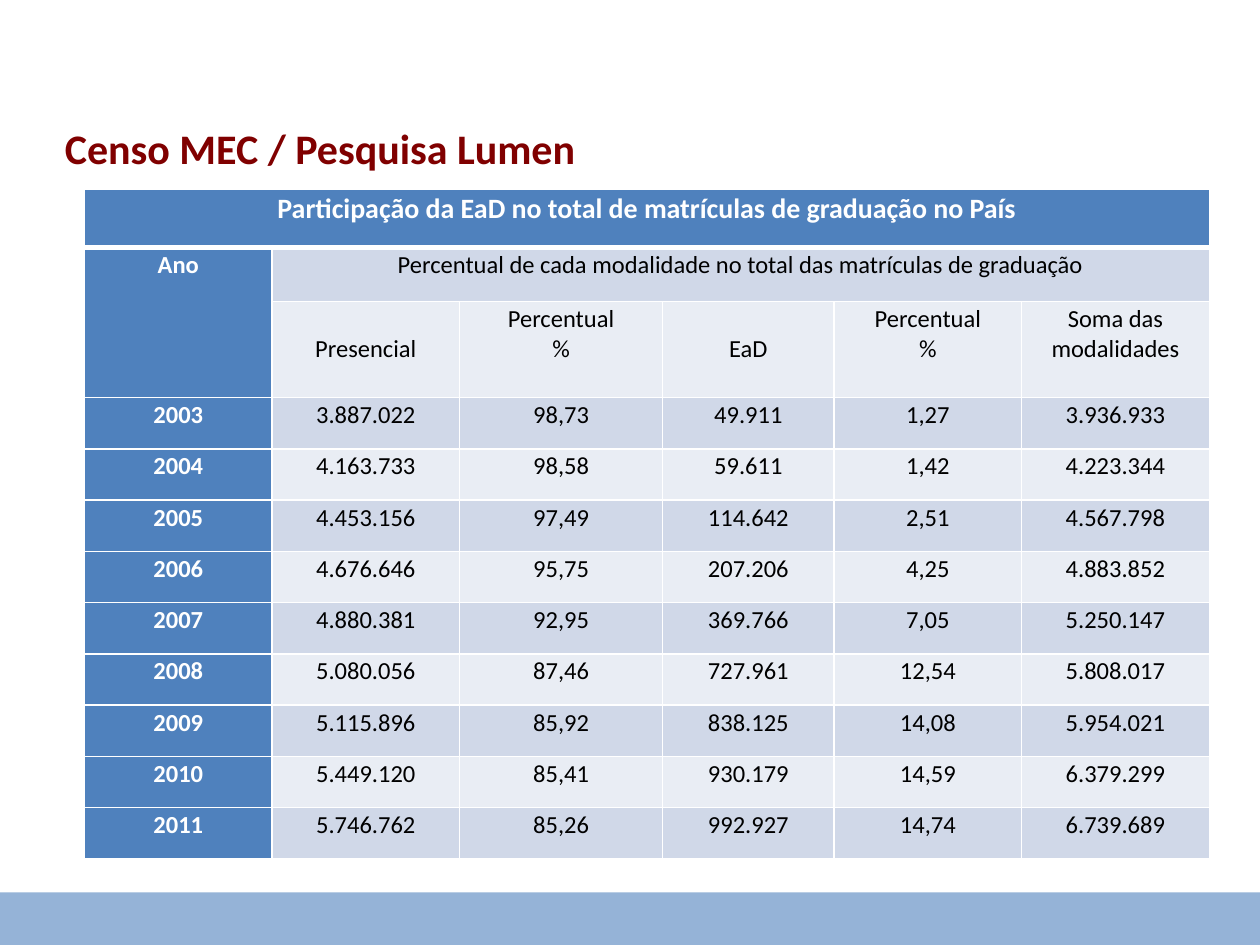
import pptx
import pptx.dml.color
import pptx.enum.shapes
import pptx.enum.text
import pptx.oxml
import pptx.oxml.ns
import pptx.util

Pt = pptx.util.Pt
RGB = pptx.dml.color.RGBColor
ALIGN = pptx.enum.text.PP_ALIGN

WHITE = RGB(0xFF, 0xFF, 0xFF)
BLACK = RGB(0, 0, 0)
MAROON = RGB(0x80, 0, 0)
BLUE = RGB(0x4F, 0x81, 0xBD)
FOOT = RGB(0x95, 0xB3, 0xD7)
DARK = RGB(0xD0, 0xD8, 0xE8)
LIGHT = RGB(0xE9, 0xED, 0xF4)

COLS = [107.2, 107.2, 116, 98, 107.2, 107.2]
HEADS = ["Presencial", "Percentual\n%", "EaD", "Percentual\n%",
         "Soma das modalidades"]
DATA = [
    ["2003", "3.887.022", "98,73", "49.911", "1,27", "3.936.933"],
    ["2004", "4.163.733", "98,58", "59.611", "1,42", "4.223.344"],
    ["2005", "4.453.156", "97,49", "114.642", "2,51", "4.567.798"],
    ["2006", "4.676.646", "95,75", "207.206", "4,25", "4.883.852"],
    ["2007", "4.880.381", "92,95", "369.766", "7,05", "5.250.147"],
    ["2008", "5.080.056", "87,46", "727.961", "12,54", "5.808.017"],
    ["2009", "5.115.896", "85,92", "838.125", "14,08", "5.954.021"],
    ["2010", "5.449.120", "85,41", "930.179", "14,59", "6.379.299"],
    ["2011", "5.746.762", "85,26", "992.927", "14,74", "6.739.689"],
]
ROWS = [33, 31, 55] + [29.3] * len(DATA)
LINE = 17.1  # height of one line of 14 point text


def write(frame, text, size=14, color=BLACK, bold=False, align=ALIGN.CENTER):
    """Fill a text frame, one paragraph for each line of text."""
    frame.word_wrap = True
    frame.text = text
    for para in frame.paragraphs:
        para.alignment = align
        font = para.runs[0].font
        font.name, font.size, font.bold = "Calibri", Pt(size), bold
        font.color.rgb = color


def edge(cell, **widths):
    """Draw white cell borders; keywords L, R, T, B give widths in points."""
    props = cell._tc.get_or_add_tcPr()
    for spot, side in enumerate("LRTB"):
        props.insert(spot, pptx.oxml.parse_xml(
            f'<a:ln{side} {pptx.oxml.ns.nsdecls("a")} '
            f'w="{Pt(widths.get(side, 1))}"><a:solidFill>'
            f'<a:srgbClr val="{WHITE}"/></a:solidFill></a:ln{side}>'))


class Page:
    def __init__(self, deck):
        self.slide = deck.slides.add_slide(deck.slide_layouts[6])
        self.shapes = self.slide.shapes

    def bar(self, x, y, w, h, fill):
        kind = pptx.enum.shapes.MSO_SHAPE.RECTANGLE
        shape = self.shapes.add_shape(kind, Pt(x), Pt(y), Pt(w), Pt(h))
        shape.shadow.inherit = False
        shape.fill.solid()
        shape.fill.fore_color.rgb = fill
        shape.line.fill.background()

    def text(self, x, y, w, h, text, **style):
        box = self.shapes.add_textbox(Pt(x), Pt(y), Pt(w), Pt(h))
        write(box.text_frame, text, **style)

    def grid(self, x, y, cols, rows):
        table = self.shapes.add_table(len(rows), len(cols), Pt(x), Pt(y),
                                      Pt(sum(cols)), Pt(sum(rows))).table
        table.first_row = table.horz_banding = False
        for col, wide in zip(table.columns, cols):
            col.width = Pt(wide)
        for row, high in zip(table.rows, rows):
            row.height = Pt(high)
        return table

    def cell(self, cell, fill, text="", drop=0, **style):
        """Paint a cell; drop lowers its text by that many points."""
        cell.fill.solid()
        cell.fill.fore_color.rgb = fill
        cell.margin_left = cell.margin_right = Pt(5)
        cell.margin_top, cell.margin_bottom = Pt(1.5 + drop), Pt(1.5)
        if text:
            write(cell.text_frame, text, **style)


def main():
    deck = pptx.Presentation()
    deck.slide_width, deck.slide_height = Pt(720), Pt(540)
    page = Page(deck)
    page.bar(0, 510, 720, 30, FOOT)
    page.text(30, 66.2, 684, 65.5, "Censo MEC / Pesquisa Lumen", size=24,
              color=MAROON, bold=True, align=ALIGN.LEFT)

    table = page.grid(48.3, 108.3, COLS, ROWS)
    title = "Participação da EaD no total de matrículas de graduação no País"
    share = ("Percentual de cada modalidade no total das matrículas "
             "de graduação")
    blank = [""] * 4
    body = [[title, ""] + blank, ["Ano", share] + blank, [""] + HEADS] + DATA
    for r, row in enumerate(body):
        for c, text in enumerate(row):
            cell = table.cell(r, c)
            head = r == 0 or c == 0
            fill = BLUE if head else DARK if r % 2 else LIGHT
            drop = LINE if text in ("Presencial", "EaD") else 0
            page.cell(cell, fill, text, drop, size=16 if r == 0 else 14,
                      color=WHITE if head else BLACK, bold=head)
            edge(cell, T=3 if r == 1 else 1, B=3 if r == 0 else 1)
    table.cell(0, 0).merge(table.cell(0, 5))
    table.cell(1, 0).merge(table.cell(2, 0))
    table.cell(1, 1).merge(table.cell(1, 5))
    deck.save("out.pptx")


if __name__ == "__main__":
    main()
